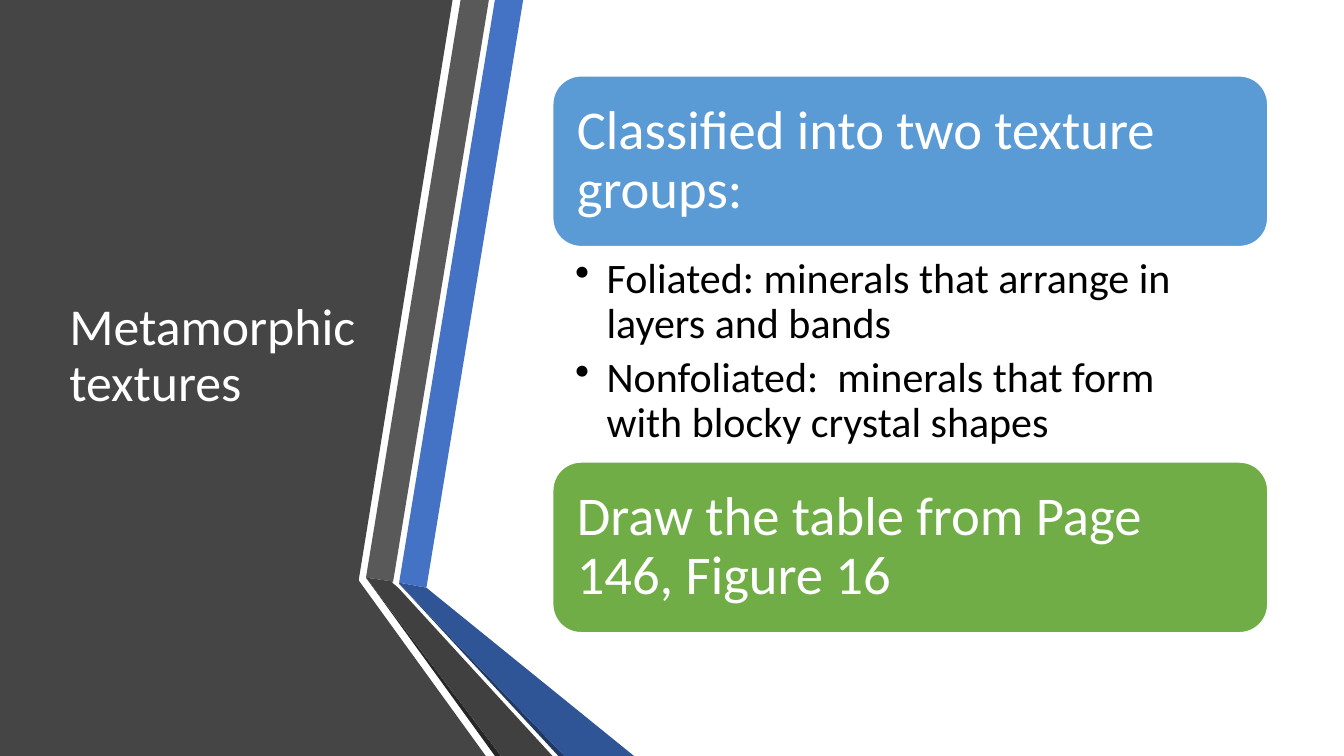
import pptx
import pptx.dml.color
import pptx.enum.shapes
import pptx.enum.text
import pptx.oxml.ns
import pptx.util
from lxml import etree

Pt = pptx.util.Pt
FONT = "Calibri"
COLORS = {
    "panel": "454545",
    "blue": "4472C4",
    "gray": "595959",
    "black": "262626",
    "navy": "203864",
    "deep_blue": "2F5597",
    "charcoal": "404040",
    "sky": "5B9BD5",
    "green": "70AD47",
    "white": "FFFFFF",
    "text": "000000",
}
BANDS = [
    ("panel", [(0, 0), (323.3, 0), (256.3, 414), (256.3, 414.7), (347, 540), (0, 540)]),
    ("blue", [(285.1, 416.2), (304.6, 419.8), (373.7, 0), (353.5, 0)]),
    ("gray", [(349.2, 0), (329, 0), (261.4, 412.6), (280.8, 415.4)]),
    ("black", [(261.4, 412.6), (353.5, 540), (357.8, 540)]),
    ("navy", [(285.1, 416.9), (398.9, 540), (403.2, 540)]),
    ("deep_blue", [(285.1, 416.9), (403.2, 540), (452.9, 540), (304.6, 419.8), (285.1, 416.2)]),
    ("charcoal", [(394.6, 540), (284.4, 419.8), (280.1, 416.2), (280.8, 415.4),
                  (261.4, 412.6), (357.8, 540)]),
]
LEFT, WIDTH = 394.6, 511.2
CARD_HEIGHT = 122.4


def rgb(name):
    return pptx.dml.color.RGBColor.from_string(COLORS[name])


def fill_shape(sp, color):
    sp.shadow.inherit = False
    sp.fill.solid()
    sp.fill.fore_color.rgb = rgb(color)


def add_band(s, color, points):
    corners = [(Pt(x), Pt(y)) for x, y in points]
    builder = s.shapes.build_freeform(*corners[0], scale=1.0)
    builder.add_line_segments(corners[1:], close=True)
    sp = builder.convert_to_shape()
    fill_shape(sp, color)
    sp.line.fill.background()


def write_text(sp, text, size, color, insets, anchor, space_after=0):
    tf = sp.text_frame
    tf.word_wrap = True
    tf.vertical_anchor = anchor
    tf.margin_left, tf.margin_top, tf.margin_right, tf.margin_bottom = map(Pt, insets)
    tf.text = text
    for p in tf.paragraphs:
        p.alignment = pptx.enum.text.PP_ALIGN.LEFT
        p.line_spacing = 0.9
        p.space_after = Pt(space_after)
        for r in p.runs:
            r.font.name = FONT
            r.font.size = Pt(size)
            r.font.color.rgb = rgb(color)


def add_bullet(p, indent):
    pPr = p._p.get_or_add_pPr()
    pPr.set("marL", str(Pt(indent)))
    pPr.set("indent", str(-Pt(indent)))
    etree.SubElement(pPr, pptx.oxml.ns.qn("a:buChar"), char="•")


def add_title(s, text):
    sp = s.shapes.add_textbox(Pt(42.5), Pt(54), Pt(218.9), Pt(401.8))
    write_text(sp, text, 37, "white", (7.2, 3.6, 7.2, 3.6),
               pptx.enum.text.MSO_ANCHOR.MIDDLE)


def add_card(s, top, color, text):
    sp = s.shapes.add_shape(pptx.enum.shapes.MSO_SHAPE.ROUNDED_RECTANGLE,
                            Pt(LEFT), Pt(top), Pt(WIDTH), Pt(CARD_HEIGHT))
    fill_shape(sp, color)
    sp.line.color.rgb = rgb("white")
    sp.line.width = Pt(1.5)
    write_text(sp, text, 39, "white", (11.5,) * 4, pptx.enum.text.MSO_ANCHOR.MIDDLE)


def add_bullets(s, top, height, items):
    sp = s.shapes.add_textbox(Pt(LEFT), Pt(top), Pt(WIDTH), Pt(height))
    write_text(sp, "\n".join(items), 30, "text", (16.2, 3.6, 21.6, 3.6),
               pptx.enum.text.MSO_ANCHOR.TOP, space_after=6)
    for p in sp.text_frame.paragraphs:
        add_bullet(p, 22.5)


def main():
    prs = pptx.Presentation()
    prs.slide_width, prs.slide_height = Pt(960), Pt(540)
    s = prs.slides.add_slide(prs.slide_layouts[6])
    for color, points in BANDS:
        add_band(s, color, points)
    add_title(s, "Metamorphic textures")
    add_card(s, 54, "sky", "Classified into two texture groups:")
    add_bullets(s, 180, 149, [
        "Foliated: minerals that arrange in layers and bands",
        "Nonfoliated:  minerals that form with blocky crystal shapes",
    ])
    add_card(s, 329.8, "green", "Draw the table from Page 146, Figure 16")
    prs.save("out.pptx")


if __name__ == "__main__":
    main()
